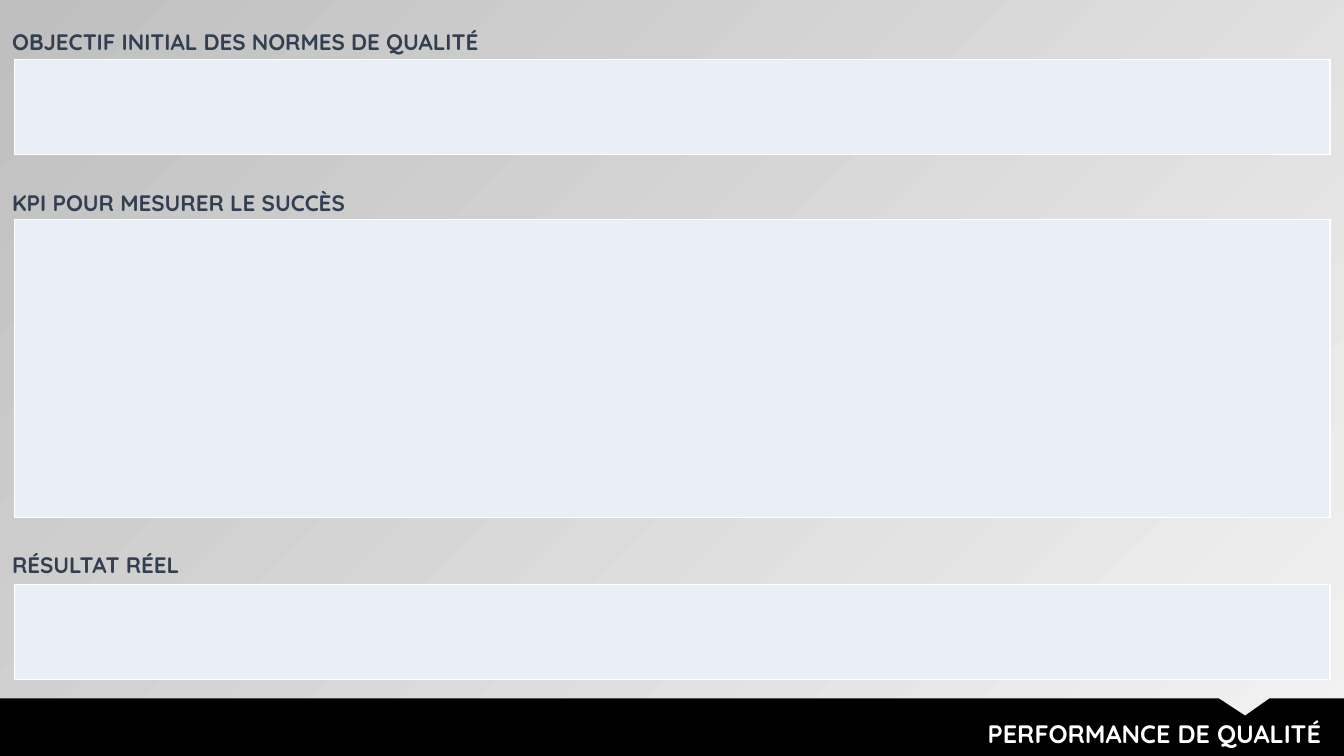
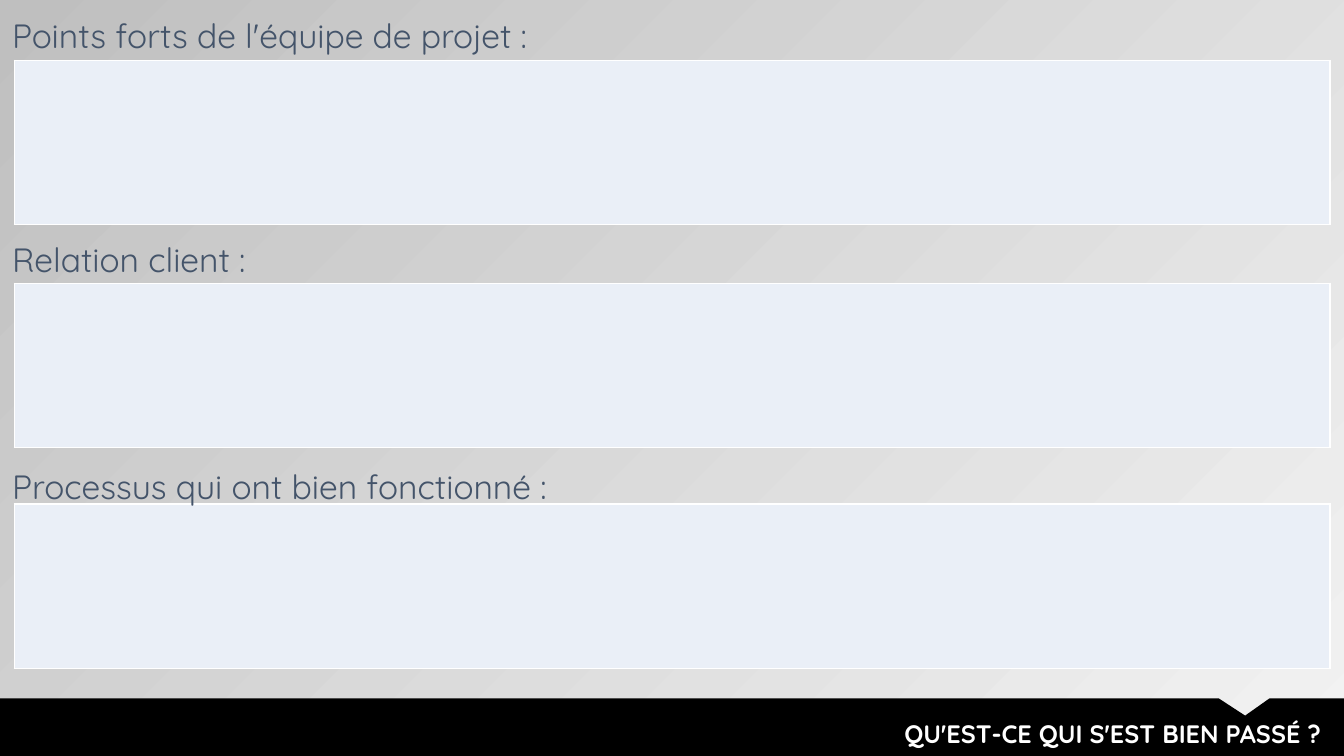
from dataclasses import dataclass

from lxml.etree import SubElement
from pptx import Presentation
from pptx.dml.color import RGBColor as RGB
from pptx.enum.text import PP_ALIGN as ALIGN
from pptx.oxml.ns import qn
from pptx.util import Emu, Pt

SCALE = 9144
W, H = 1333, 750


@dataclass(frozen=True)
class Theme:
    """Colours, font and type sizes of the deck."""
    font: str = "Quicksand"
    light: str = "F2F2F2"
    dark: str = "BFBFBF"
    band: str = "000000"
    white: str = "FFFFFF"
    field: str = "EAEFF7"
    heading: str = "333F50"
    prompt: str = "44546A"
    title_pt: int = 18
    heading_pt: int = 16
    prompt_pt: int = 24
    line_pt: float = 21.5
    border_pt: int = 1


@dataclass(frozen=True)
class Section:
    """A label and the empty field below it."""
    label: str
    top: int
    height: int
    width: int
    rise: int = 40
    label_h: int = 40
    spacing: object = Pt(Theme.line_pt)


T = Theme()


def px(n):
    """Turn px into EMU."""
    return Emu(n * SCALE)


def add_text(s, box, text, size, color, bold, inset=(10, 5)):
    """Place a one-line text box and return its paragraph."""
    tf = s.shapes.add_textbox(*map(px, box)).text_frame
    tf.word_wrap = True
    tf.margin_left = tf.margin_right = px(inset[0])
    tf.margin_top = tf.margin_bottom = px(inset[1])
    p = tf.paragraphs[0]
    p.text = text
    p.font.name, p.font.size, p.font.bold = T.font, Pt(size), bold
    p.font.color.rgb = RGB.from_string(color)
    return p


def add_background(s):
    """Fill the slide with the diagonal grey gradient."""
    fill = s.background.fill
    fill.gradient()
    fill.gradient_angle = 135
    for stop, color, pos in zip(fill.gradient_stops, (T.light, T.dark), (0, 1)):
        stop.color.rgb = RGB.from_string(color)
        stop.position = pos


def add_footer(s, box, title):
    """Draw the notched band with the slide title at its right."""
    x, y, w, h = box
    notch = [(w - 124, 0), (w - 98, 17), (w - 74, 0)]
    outline = notch + [(w, 0), (w, h), (0, h)]
    fb = s.shapes.build_freeform(x, y, scale=SCALE)
    fb.add_line_segments([(x + dx, y + dy) for dx, dy in outline], close=True)
    sp = fb.convert_to_shape()
    sp.shadow.inherit = False
    sp.fill.solid()
    sp.fill.fore_color.rgb = RGB.from_string(T.band)
    sp.line.fill.background()
    p = add_text(s, (x + w - 919, y + 15, 906, 40), title,
                 T.title_pt, T.white, True)
    p.alignment = ALIGN.RIGHT


def add_borders(cell):
    """Give all four sides of a cell a thin line."""
    tc_pr = cell._tc.get_or_add_tcPr()
    for i, side in enumerate(("a:lnL", "a:lnR", "a:lnT", "a:lnB")):
        ln = SubElement(tc_pr, qn(side), w=str(Pt(T.border_pt)))
        SubElement(SubElement(ln, qn("a:solidFill")), qn("a:srgbClr"), val=T.white)
        tc_pr.insert(i, ln)


def add_field(s, box):
    """Place a one-cell table as an empty field."""
    table = s.shapes.add_table(1, 1, *map(px, box)).table
    table.first_row = table.horz_banding = False
    cell = table.cell(0, 0)
    cell.fill.solid()
    cell.fill.fore_color.rgb = RGB.from_string(T.field)
    add_borders(cell)


def add_section(s, sec, size, color, bold):
    """Place a section's field and the label above it."""
    add_field(s, (14, sec.top, W - 28, sec.height))
    p = add_text(s, (0, sec.top - sec.rise, sec.width, sec.label_h),
                 sec.label, size, color, bold, (12, 6))
    p.line_spacing = sec.spacing


def add_form_slide(prs, title, sections, size, color, bold):
    """Build one slide of labelled fields above the footer."""
    s = prs.slides.add_slide(prs.slide_layouts[6])
    add_background(s)
    add_footer(s, (0, 693, W, H - 693), title)
    for sec in sections:
        add_section(s, sec, size, color, bold)


def main():
    """Build and save the deck."""
    prs = Presentation()
    prs.slide_width, prs.slide_height = px(W), px(H)
    add_form_slide(prs, "PERFORMANCE DE QUALITÉ", [
        Section("OBJECTIF INITIAL DES NORMES DE QUALITÉ", 59, 94, 558),
        Section("KPI POUR MESURER LE SUCCÈS", 218, 295, 531),
        Section("RÉSULTAT RÉEL", 580, 94, 337, rise=42),
    ], T.heading_pt, T.heading, True)
    add_form_slide(prs, "QU'EST-CE QUI S'EST BIEN PASSÉ ?", [
        Section("Points forts de l'équipe de projet :", 60, 163, 763, 41, 44),
        Section("Relation client :", 281, 163, 763, 40, 44),
        Section("Processus qui ont bien fonctionné :", 500, 163, 763, 52, 57, 1.2),
    ], T.prompt_pt, T.prompt, False)
    prs.save("out.pptx")


if __name__ == "__main__":
    main()
